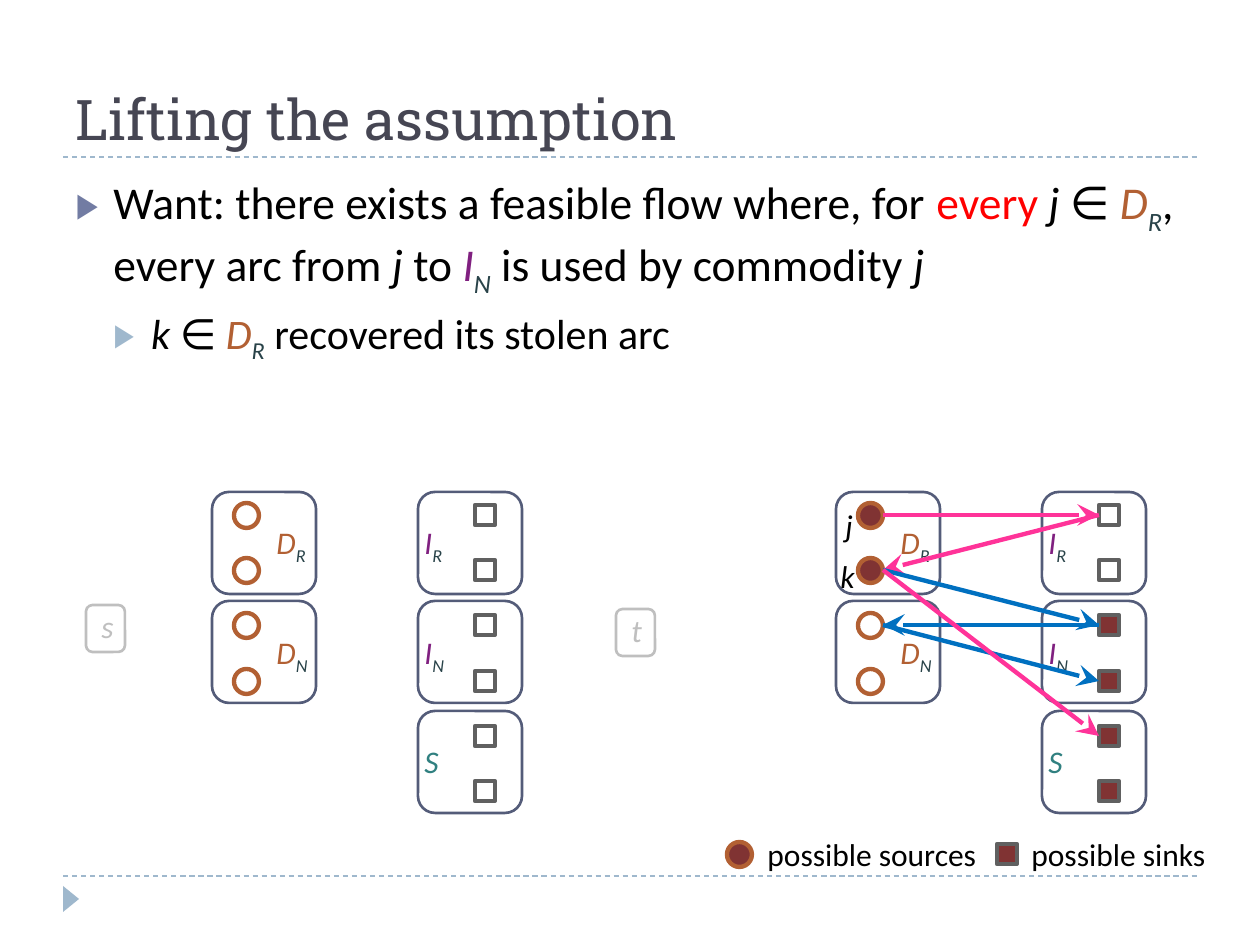
"""Builds the slide "Lifting the assumption" with its two flow diagrams."""
import lxml.etree
import pptx
import pptx.dml.color
import pptx.enum.dml
import pptx.enum.shapes
import pptx.enum.text
import pptx.oxml.ns
import pptx.util

PX = 914400 / 126
COLORS = {
    "black": "000000", "red": "FF0000", "title": "464653", "rule": "9FB8CD",
    "bullet": "727CA3", "demand": "B26033", "index": "294349", "facility": "802080",
    "set": "308080", "box": "545C79", "square": "606060", "active": "803333",
    "white": "FFFFFF", "faded": "BFBFBF", "pink": "FF3399", "blue": "0070C0",
}
RGB = {name: pptx.dml.color.RGBColor.from_string(value) for name, value in COLORS.items()}
SHAPES = pptx.enum.shapes.MSO_SHAPE
STRAIGHT = pptx.enum.shapes.MSO_CONNECTOR.STRAIGHT
qn = pptx.oxml.ns.qn

presentation = pptx.Presentation()
presentation.slide_width = pptx.util.Inches(10)
presentation.slide_height = pptx.util.Inches(7.5)
slide = presentation.slides.add_slide(presentation.slide_layouts[1])


def add_outline(kind, left, top, width, height, line, line_width, fill=None):
    shape = slide.shapes.add_shape(kind, *[round(value * PX) for value in (left, top, width, height)])
    shape.shadow.inherit = False
    if fill:
        shape.fill.solid()
        shape.fill.fore_color.rgb = RGB[fill]
    else:
        shape.fill.background()
    if line:
        shape.line.color.rgb = RGB[line]
        shape.line.width = pptx.util.Pt(line_width)
    else:
        shape.line.fill.background()
    return shape


def write_runs(paragraph, size, runs):
    for text, color, style in runs:
        run = paragraph.add_run()
        run.text = text
        run.font.name = "Calibri"
        run.font.size = pptx.util.Pt(size)
        run.font.color.rgb = RGB[color]
        run.font.italic = style != "plain"
        if style == "sub":
            run.font._element.set("baseline", "-25000")


title = slide.shapes.title
title.left, title.top, title.width, title.height = [round(value * PX) for value in (63, 22, 1134, 136)]
title.text_frame.text = "Lifting the assumption"
title.text_frame.vertical_anchor = pptx.enum.text.MSO_ANCHOR.BOTTOM
title.text_frame.paragraphs[0].alignment = pptx.enum.text.PP_ALIGN.LEFT
title_font = title.text_frame.paragraphs[0].runs[0].font
title_font.name = "Roboto Slab"
title_font.size = pptx.util.Pt(32)
title_font.color.rgb = RGB["title"]

body = slide.placeholders[1]
body.left, body.top, body.width, body.height = [round(value * PX) for value in (63, 168, 1172, 335)]
demand_set = [(" D", "demand", "italic"), ("R", "index", "sub")]
statements = [
    (26, 6, "bullet", [
        ("Want: there exists a feasible flow where, for ", "black", "plain"),
        ("every ", "red", "plain"), ("j ", "black", "italic"), ("∈", "black", "plain"), *demand_set,
        (", every arc from ", "black", "plain"), ("j", "black", "italic"), (" to ", "black", "plain"),
        ("I", "facility", "italic"), ("N", "index", "sub"),
        (" is used by commodity ", "black", "plain"), ("j", "black", "italic")]),
    (24, 5, "rule", [
        ("k ", "black", "italic"), ("∈", "black", "plain"), *demand_set,
        (" recovered its stolen arc", "black", "plain")]),
]
for level, (size, space, bullet, runs) in enumerate(statements):
    paragraph = body.text_frame.paragraphs[0] if level == 0 else body.text_frame.add_paragraph()
    paragraph.level = level
    paragraph.space_before = pptx.util.Pt(space)
    write_runs(paragraph, size, runs)
    properties = paragraph._p.get_or_add_pPr()
    properties.set("marL", str(pptx.util.Inches(0.3 * (level + 1))))
    properties.set("indent", str(pptx.util.Inches(-0.3)))
    bullet_color = lxml.etree.SubElement(properties, qn("a:buClr"))
    lxml.etree.SubElement(bullet_color, qn("a:srgbClr"), val=COLORS[bullet])
    lxml.etree.SubElement(properties, qn("a:buSzPct"), val="76000")
    lxml.etree.SubElement(properties, qn("a:buFont"), typeface="Arial")
    lxml.etree.SubElement(properties, qn("a:buChar"), char="▶")

footer_mark = add_outline(SHAPES.ISOSCELES_TRIANGLE, 58, 891, 26, 16, None, 0, "rule")
footer_mark.rotation = 90

for left, top in [(86, 605), (616, 609)]:
    add_outline(SHAPES.ROUNDED_RECTANGLE, left, top, 39, 47, "faded", 1.5)

node_offsets = [index * 166 // 3 for index in range(6)]
box_tops = [492, 601, 711]
diagrams = [(0, [], []), (624, [0, 1], [2, 3, 4, 5])]
labels = [
    (89, 601, 37, [("s", "faded", "italic")]),
    (619, 605, 34, [("t", "faded", "italic")]),
    (833, 500, 32, [("j", "black", "italic")]),
    (828, 551, 40, [("k", "black", "italic")]),
    (755, 829, 236, [("possible sources", "black", "plain")]),
    (1019, 829, 200, [("possible sinks", "black", "plain")]),
]
for shift, sources, sinks in diagrams:
    for left, tops in [(212, box_tops[:2]), (418, box_tops)]:
        for top in tops:
            add_outline(SHAPES.ROUNDED_RECTANGLE, left + shift, top, 104, 102, "box", 1.5)
    for index, offset in enumerate(node_offsets[:4]):
        add_outline(SHAPES.OVAL, 234 + shift, 503 + offset, 25, 25, "demand", 2.5,
                    "active" if index in sources else None)
    squares = [
        add_outline(SHAPES.RECTANGLE, 475 + shift, 505 + offset, 20, 20, "square", 2.5,
                    "active" if index in sinks else "white")
        for index, offset in enumerate(node_offsets)
    ]
    for left, width, letter, color in [(264, 60, "D", "demand"), (412, 48, "I", "facility")]:
        for top, subscript in [(517, "R"), (627, "N")]:
            runs = [(letter, color, "italic"), (subscript, "index", "sub")]
            labels.append((left + shift, top, width, runs))
    labels.append((412 + shift, 736, 40, [("S", "set", "italic")]))

add_outline(SHAPES.OVAL, 727, 842, 25, 25, "demand", 2.5, "active")
add_outline(SHAPES.RECTANGLE, 997, 844, 20, 20, "square", 2.5, "active")

for left, top, width, runs in labels:
    label = slide.shapes.add_textbox(*[round(value * PX) for value in (left, top, width, 50)])
    label.text_frame.word_wrap = False
    label.text_frame.auto_size = pptx.enum.text.MSO_AUTO_SIZE.SHAPE_TO_FIT_TEXT
    write_runs(label.text_frame.paragraphs[0], 18, runs)

connectors = []
for top in (157, 876):
    rule = slide.shapes.add_connector(STRAIGHT, *[round(value * PX) for value in (63, top, 1197, top)])
    rule.line.dash_style = pptx.enum.dml.MSO_LINE.DASH
    connectors.append((rule, "rule", 0.75))

arrows = [
    (0, 0, "pink", True), (1, 0, "pink", False), (1, 2, "blue", True),
    (2, 2, "blue", False), (2, 3, "blue", True), (1, 4, "pink", True),
]
for circle, square, color, forward in arrows:
    circle_point = (round(883 * PX), round((515 + node_offsets[circle]) * PX))
    arrow = slide.shapes.add_connector(STRAIGHT, *circle_point, *circle_point)
    if forward:
        arrow.end_connect(squares[square], 1)
    else:
        arrow.begin_connect(squares[square], 1)
    lxml.etree.SubElement(arrow.line._get_or_add_ln(), qn("a:tailEnd"), type="stealth", w="lg", len="lg")
    connectors.append((arrow, color, 2.5))

for connector, color, width in connectors:
    connector.line.color.rgb = RGB[color]
    connector.line.width = pptx.util.Pt(width)
    lxml.etree.SubElement(connector._element.spPr, qn("a:effectLst"))

presentation.save("out.pptx")
